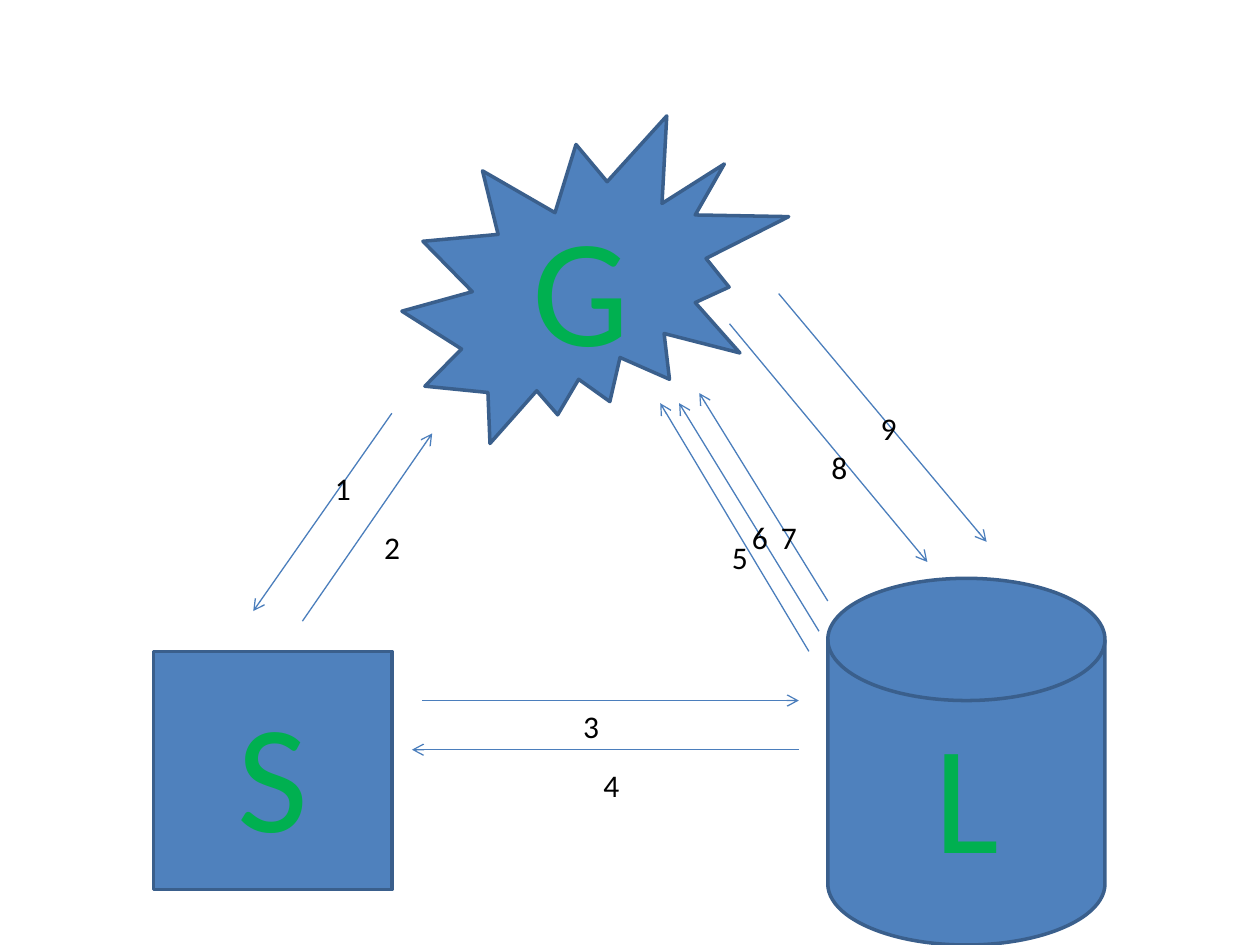
import pptx
import pptx.dml.color
import pptx.enum.shapes
import pptx.enum.text
import pptx.oxml
import pptx.util
from pptx.util import Inches


def color(hex_string):
    return pptx.dml.color.RGBColor.from_string(hex_string)


def add_label(frame, text, size, hex_string):
    run = frame.paragraphs[0].add_run()
    run.text = text
    run.font.name = "Calibri"
    run.font.size = pptx.util.Pt(size)
    run.font.color.rgb = color(hex_string)


presentation = pptx.Presentation()
presentation.slide_width = Inches(10)
presentation.slide_height = Inches(7.5)
slide = presentation.slides.add_slide(presentation.slide_layouts[6])

shapes = pptx.enum.shapes.MSO_SHAPE
nodes = [
    ("G", shapes.EXPLOSION2, 3.19, 0.92, 3.07, 2.6),
    ("L", shapes.FLOWCHART_MAGNETIC_DISK, 6.57, 4.59, 2.2, 2.91),
    ("S", shapes.RECTANGLE, 1.22, 5.17, 1.89, 1.89),
]
for letter, outline, *box in nodes:
    node = slide.shapes.add_shape(outline, *map(Inches, box))
    node.shadow.inherit = False
    node.fill.solid()
    node.fill.fore_color.rgb = color("4F81BD")
    node.line.color.rgb = color("3A5F8C")
    node.line.width = pptx.util.Pt(2)
    node.text_frame.vertical_anchor = pptx.enum.text.MSO_ANCHOR.MIDDLE
    node.text_frame.paragraphs[0].alignment = pptx.enum.text.PP_ALIGN.CENTER
    add_label(node.text_frame, letter, 88, "00B050")

steps = [
    ((3.11, 3.28, 2.01, 4.85), (2.56, 3.67)),
    ((2.4, 4.93, 3.43, 3.44), (2.95, 4.14)),
    ((3.35, 5.56, 6.34, 5.56), (4.53, 5.56)),
    ((6.34, 5.95, 3.27, 5.95), (4.69, 6.03)),
    ((6.42, 5.17, 5.24, 3.2), (5.71, 4.22)),
    ((6.5, 5.01, 5.39, 3.2), (5.87, 4.06)),
    ((6.57, 4.77, 5.55, 3.12), (6.1, 4.06)),
    ((5.79, 2.57, 7.36, 4.46), (6.5, 3.51)),
    ((6.18, 2.33, 7.83, 4.3), (6.89, 3.2)),
]
for ends, _ in steps:
    arrow = slide.shapes.add_connector(
        pptx.enum.shapes.MSO_CONNECTOR.STRAIGHT, *map(Inches, ends)
    )
    arrow.line.color.rgb = color("4B7EBC")
    arrow.line.width = pptx.util.Pt(0.75)
    head = pptx.oxml.parse_xml(
        '<a:tailEnd xmlns:a="http://schemas.openxmlformats.org/drawingml/2006/main" type="arrow"/>'
    )
    arrow.line._get_or_add_ln().append(head)
    arrow._element.spPr.append(
        pptx.oxml.parse_xml(
            '<a:effectLst xmlns:a="http://schemas.openxmlformats.org/drawingml/2006/main"/>'
        )
    )

for number, (_, corner) in enumerate(steps, start=1):
    step_number = slide.shapes.add_textbox(*map(Inches, corner), Inches(0.33), Inches(0.4))
    step_number.text_frame.word_wrap = False
    step_number.text_frame.auto_size = pptx.enum.text.MSO_AUTO_SIZE.SHAPE_TO_FIT_TEXT
    add_label(step_number.text_frame, str(number), 18, "000000")

presentation.save("out.pptx")
